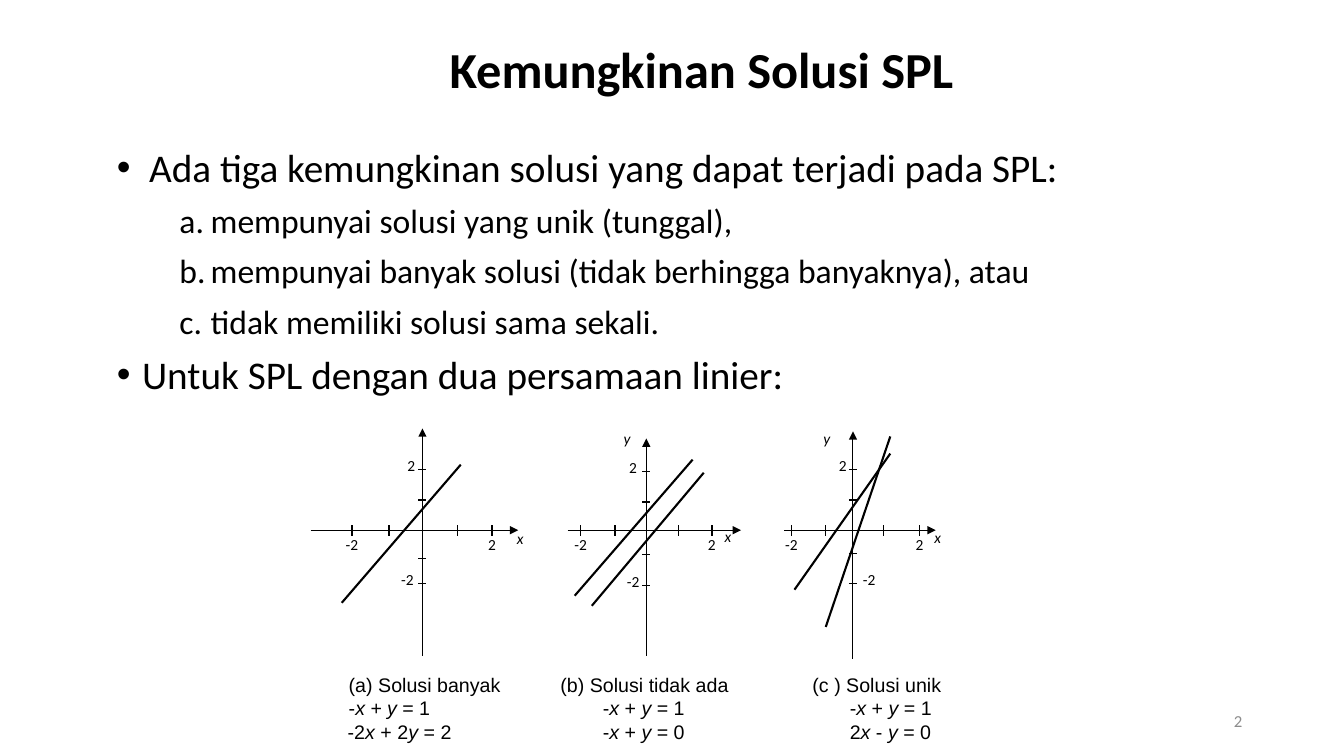
import pptx
import pptx.util
import pptx.dml.color
import pptx.enum.shapes
import pptx.enum.text
import pptx.oxml.ns
from lxml import etree

PX = 9144  # EMU per px, 100 px to the inch
BLACK, GREY = "000000", "8C8C8C"
ALIGN = pptx.enum.text.PP_ALIGN
MIDDLE = pptx.enum.text.MSO_ANCHOR.MIDDLE
X_AXIS = 526  # height shared by the three horizontal axes

# across / up: axis ends; sides: centres of the "2" and "-2" labels beside the y axis
GRAPHS = [
    dict(origin=419, across=(308, 514), up=(425, 651),
         x_ticks=(349, 386, 454, 488), y_ticks=(466, 496, 554, 579), sides=(408, 404),
         names=[("x", 516, 520)], solutions=[(339, 598, 457, 461)]),
    dict(origin=641, across=(563, 735), up=(435, 651),
         x_ticks=(576, 610, 673, 706), y_ticks=(468, 498, 550, 581), sides=(628, 628),
         names=[("y", 622, 421), ("x", 722, 518)],
         solutions=[(570, 591, 687, 456), (587, 601, 698, 469)]),
    dict(origin=846, across=(778, 928), up=(428, 654),
         x_ticks=(785, 819, 876, 912), y_ticks=(466, 496, 549, 579), sides=(836, 862),
         names=[("y", 820, 421), ("x", 930, 519)],
         solutions=[(788, 585, 883, 450), (819, 622, 883, 433)]),
]

# left, width, then rows of (first-line indent, text); x and y become italic
CAPTIONS = [
    (324, 192, "(a) Solusi banyak", 12, [(12, "-x +\ty = 1"), (11, "-2x + 2y = 2")]),
    (533, 242, "(b) Solusi tidak ada", 13, [(55, "-x + y = 1"), (55, "-x + y = 0")]),
    (783, 225, "(c ) Solusi unik", 13, [(50, "-x + y = 1"), (50, "2x - y = 0")]),
]
Y_TAB = 68

BULLET = ("buChar", {"char": "•"}, 25)
LETTER = ("buAutoNum", {"type": "alphaLcPeriod"}, 31)
POINTS = [
    (BULLET, 32, 28, "Ada tiga kemungkinan solusi yang dapat terjadi pada SPL:"),
    (LETTER, 93, 24, "mempunyai solusi yang unik (tunggal),"),
    (LETTER, 93, 24, "mempunyai banyak solusi (tidak berhingga banyaknya), atau"),
    (LETTER, 93, 24, "tidak memiliki solusi sama sekali."),
    (BULLET, 25, 28, "Untuk SPL dengan dua persamaan linier:"),
]


def px(length):
    return pptx.util.Emu(length * PX)


def color(hex_code):
    return pptx.dml.color.RGBColor.from_string(hex_code)


def add_xml(parent, tag, **attributes):
    return etree.SubElement(parent, pptx.oxml.ns.qn("a:" + tag), attributes)


def add_run(paragraph, text, size, font="Calibri", hex_code=BLACK, bold=False, italic=False):
    run = paragraph.add_run()
    run.text = text
    run.font.name = font
    run.font.size = pptx.util.Pt(size)
    run.font.bold = bold
    run.font.italic = italic
    run.font.color.rgb = color(hex_code)


def move(shape, left, top, width, height):
    shape.left, shape.top, shape.width, shape.height = map(px, (left, top, width, height))


def add_box(shapes, left, top, width, height):
    frame = shapes.add_textbox(*map(px, (left, top, width, height))).text_frame
    frame.word_wrap = True
    return frame


def add_line(shapes, x1, y1, x2, y2, weight, arrow=None):
    line = shapes.add_connector(pptx.enum.shapes.MSO_CONNECTOR.STRAIGHT,
                                *map(px, (x1, y1, x2, y2)))
    line.line.color.rgb = color(BLACK)
    line.line.width = pptx.util.Pt(weight)
    if arrow:
        add_xml(line.line._get_or_add_ln(), arrow, type="triangle")
    add_xml(line._element.spPr, "effectLst")


def add_label(shapes, text, center, top):
    label = add_box(shapes, center - 20, top, 40, 46).paragraphs[0]
    label.alignment = ALIGN.CENTER
    add_run(label, text, 11, italic=text in "xy")


def add_graph(shapes, origin, across, up, x_ticks, y_ticks, sides, names, solutions):
    # Axes
    add_line(shapes, across[0], X_AXIS, across[1], X_AXIS, 0.75, "tailEnd")
    add_line(shapes, origin, up[0], origin, up[1], 0.75, "headEnd")
    # Ticks
    for x in x_ticks:
        add_line(shapes, x, X_AXIS - 5, x, X_AXIS + 6, 1)
    for y in y_ticks:
        add_line(shapes, origin - 4, y, origin + 4, y, 1)
    # Lines of the equations
    for ends in solutions:
        add_line(shapes, *ends, 1.5)
    # Values at the outer ticks, and axis names
    for text, x in zip(("-2", "2"), (x_ticks[0], x_ticks[-1])):
        add_label(shapes, text, x, X_AXIS)
    for text, center, y in zip(("2", "-2"), sides, (y_ticks[0], y_ticks[-1])):
        add_label(shapes, text, center, y - 18)
    for name, center, top in names:
        add_label(shapes, name, center, top)


def add_equation(paragraph, equation):
    plain = ""
    for symbol in equation:
        if symbol in "xy":
            add_run(paragraph, plain, 14, "Arial")
            add_run(paragraph, symbol, 14, "Arial", italic=True)
            plain = ""
        else:
            plain += symbol
    add_run(paragraph, plain, 14, "Arial")


def add_caption(shapes, left, width, heading, heading_indent, equations):
    frame = add_box(shapes, left, 662, width, 81)
    frame.vertical_anchor = MIDDLE
    title = frame.paragraphs[0]
    title._p.get_or_add_pPr().set("indent", str(px(heading_indent)))
    add_run(title, heading, 14, "Arial")
    for indent, equation in equations:
        row = frame.add_paragraph()
        properties = row._p.get_or_add_pPr()
        properties.set("indent", str(px(indent)))
        if "\t" in equation:
            add_xml(add_xml(properties, "tabLst"), "tab", pos=str(px(Y_TAB)), algn="l")
        add_equation(row, equation)


def fill_points(body):
    frame = body.text_frame
    frame.auto_size = pptx.enum.text.MSO_AUTO_SIZE.NONE
    for index, ((tag, attributes, hanging), margin, size, text) in enumerate(POINTS):
        point = frame.add_paragraph() if index else frame.paragraphs[0]
        point.line_spacing = 0.9
        point.space_before = pptx.util.Pt(10)
        properties = point._p.get_or_add_pPr()
        properties.set("marL", str(px(margin)))
        properties.set("indent", str(px(-hanging if margin != 32 else -margin)))
        add_xml(properties, tag, **attributes)
        add_run(point, text, size)


def main():
    deck = pptx.Presentation()
    deck.slide_width, deck.slide_height = px(1333), px(750)
    slide = deck.slides.add_slide(deck.slide_layouts[1])

    # Title and list
    title, body = slide.placeholders
    move(title, 246, 20, 900, 95)
    title.text_frame.vertical_anchor = MIDDLE
    title.text_frame.paragraphs[0].alignment = ALIGN.CENTER
    add_run(title.text_frame.paragraphs[0], "Kemungkinan Solusi SPL", 36, bold=True)
    move(body, 106, 142, 1122, 550)
    fill_points(body)

    # Slide number
    number = add_box(slide.shapes, 942, 695, 300, 40)
    number.vertical_anchor = MIDDLE
    number.paragraphs[0].alignment = ALIGN.RIGHT
    add_run(number.paragraphs[0], "2", 12, hex_code=GREY)

    # Graphs and their captions
    graphs = slide.shapes.add_group_shape().shapes
    for graph in GRAPHS:
        add_graph(graphs, **graph)
    for caption in CAPTIONS:
        add_caption(slide.shapes, *caption)

    deck.save("out.pptx")


if __name__ == "__main__":
    main()
